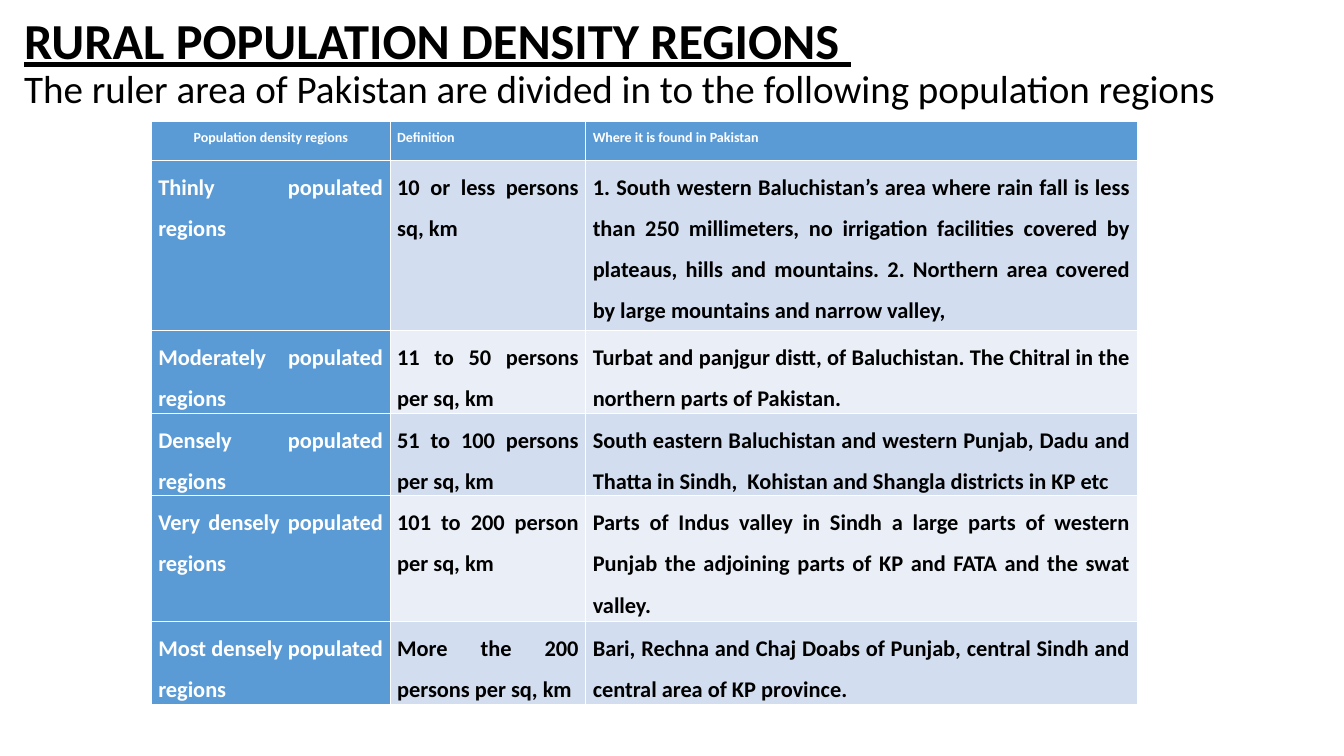
from pptx import Presentation
from pptx.dml.color import RGBColor
from pptx.enum.text import MSO_ANCHOR, MSO_AUTO_SIZE, PP_ALIGN
from pptx.util import Inches, Pt

HEADING = "RURAL POPULATION DENSITY REGIONS "
SUBHEADING = "The ruler area of Pakistan are divided in to the following population regions"
REGIONS = [
    ("Population density regions", "Definition", "Where it is found in Pakistan"),
    ("Thinly populated regions", "10 or less persons sq, km",
     "1. South western Baluchistan’s area where rain fall is less than 250 millimeters, "
     "no irrigation facilities covered by plateaus, hills and mountains. "
     "2. Northern area covered by large mountains and narrow valley, "),
    ("Moderately populated regions", "11 to 50 persons per sq, km",
     "Turbat and panjgur distt, of Baluchistan. The Chitral in the northern parts of Pakistan."),
    ("Densely populated regions", "51 to 100 persons per sq, km",
     "South eastern Baluchistan and western Punjab, Dadu and Thatta in Sindh,  "
     "Kohistan and Shangla districts in KP etc "),
    ("Very densely populated regions", "101 to 200 person per sq, km",
     "Parts of Indus valley in Sindh a large parts of western Punjab the adjoining "
     "parts of KP and FATA and the swat valley."),
    ("Most densely populated regions", "More the 200 persons per sq, km",
     "Bari, Rechna and Chaj Doabs of Punjab, central Sindh and central area of KP province."),
]
COLUMN_WIDTHS = [2.37, 1.94, 5.47]
ROW_HEIGHTS = [0.39, 1.69, 0.82, 0.82, 1.25, 0.82]
BLUE, BANDS = "5B9BD5", ("EAEFF7", "D2DEEF")
WHITE, BLACK = "FFFFFF", "000000"


def set_all(target, values):
    for name, value in values.items():
        setattr(target, name, value)


def format_run(run, size, color, bold, underline=False):
    set_all(run.font, {"name": "Calibri", "size": Pt(size), "bold": bold, "underline": underline})
    run.font.color.rgb = RGBColor.from_string(color)


presentation = Presentation()
set_all(presentation, {"slide_width": Inches(13.33), "slide_height": Inches(7.5)})
slide = presentation.slides.add_slide(presentation.slide_layouts[5])

# Title: heading and subheading, raised within the box by the bottom margin
title = slide.shapes.title
set_all(title, {"left": Inches(0.14), "top": Inches(0.35),
                "width": Inches(12.28), "height": Inches(1.17)})
set_all(title.text_frame, {"word_wrap": True, "auto_size": MSO_AUTO_SIZE.NONE,
                           "vertical_anchor": MSO_ANCHOR.MIDDLE,
                           "margin_top": 0, "margin_bottom": Inches(0.6)})
paragraph = title.text_frame.paragraphs[0]
set_all(paragraph, {"alignment": PP_ALIGN.LEFT, "line_spacing": 0.9, "space_before": Pt(0)})
for text, size, strong in [(HEADING, 36, True), (SUBHEADING, 27.9, False)]:
    if paragraph.runs:
        paragraph.add_line_break()
    run = paragraph.add_run()
    run.text = text
    format_run(run, size, BLACK, strong, strong)

# Table: blue header row and first column, banded body
table = slide.shapes.add_table(
    len(REGIONS), len(COLUMN_WIDTHS), Inches(1.5), Inches(1.2),
    Inches(sum(COLUMN_WIDTHS)), Inches(sum(ROW_HEIGHTS))).table
table.first_col = True
for column, width in zip(table.columns, COLUMN_WIDTHS):
    column.width = Inches(width)
for row, height in zip(table.rows, ROW_HEIGHTS):
    row.height = Inches(height)

for r, texts in enumerate(REGIONS):
    for c, text in enumerate(texts):
        is_header = r == 0
        is_blue = is_header or c == 0
        cell = table.cell(r, c)
        set_all(cell, {"margin_left": Inches(0.07), "margin_right": Inches(0.07),
                       "margin_top": 0, "margin_bottom": 0})
        cell.fill.solid()
        cell.fill.fore_color.rgb = RGBColor.from_string(BLUE if is_blue else BANDS[r % 2])
        if not is_header:
            alignment = PP_ALIGN.JUSTIFY
        else:
            alignment = PP_ALIGN.CENTER if c == 0 else PP_ALIGN.LEFT
        paragraph = cell.text_frame.paragraphs[0]
        set_all(paragraph, {"alignment": alignment, "line_spacing": 1.5, "space_after": Pt(10)})
        run = paragraph.add_run()
        run.text = text
        format_run(run, 10 if is_header else 16, WHITE if is_blue else BLACK, True)

presentation.save("out.pptx")
